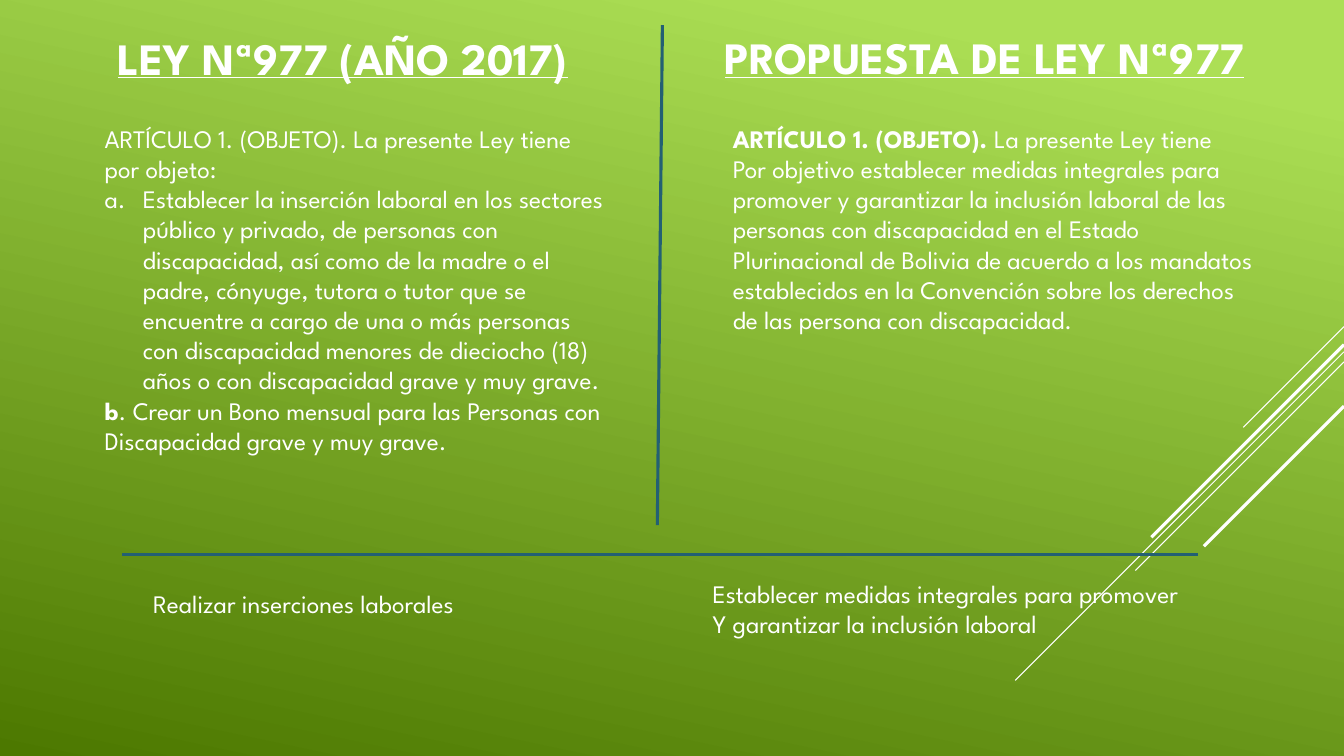
import dataclasses

import lxml.etree
import pptx
import pptx.dml.color
import pptx.enum.shapes
import pptx.enum.text
import pptx.oxml.ns
import pptx.util


@dataclasses.dataclass(frozen=True)
class Theme:
    font: str = "League Spartan"
    text: str = "FFFFFF"
    divider: str = "236073"
    light: str = "ACDF55"
    dark: str = "4C7800"
    heading_size: float = 32
    body_size: float = 18
    thin: float = 0.75
    thick: float = 2.25


THEME = Theme()
WIDTH, HEIGHT = 13.33, 7.5
LEFT_COLUMN, RIGHT_COLUMN = 0.94, 6.97
HEADING_TOP, ARTICLE_TOP, SUMMARY_TOP = 0.25, 1.17, 5.69


def color(value):
    return pptx.dml.color.RGBColor.from_string(value)


def inches(*lengths):
    return [pptx.util.Inches(length) for length in lengths]


def paint_background(slide):
    fill = slide.background.fill
    fill.gradient()
    fill.gradient_angle = 258
    stops = ((0.1, THEME.light), (1, THEME.dark))
    for stop, (position, value) in zip(fill.gradient_stops, stops):
        stop.position = position
        stop.color.rgb = color(value)


def add_line(slide, start, end, value, width):
    line = slide.shapes.add_connector(
        pptx.enum.shapes.MSO_CONNECTOR.STRAIGHT, *inches(*start, *end))
    line.line.color.rgb = color(value)
    line.line.width = pptx.util.Pt(width)
    properties = line._element.spPr
    lxml.etree.SubElement(properties, pptx.oxml.ns.qn("a:effectLst"))


def add_stripes(slide):
    stripes = (
        (3.24, 1, THEME.thin),
        (3.49, 3.26, THEME.thin),
        (3.59, 2.07, THEME.thin),
        (3.42, 1.91, THEME.thick),
        (4.03, 1.39, THEME.thick),
    )
    for top, length, width in stripes:
        add_line(slide, (WIDTH, top), (WIDTH - length, top + length), THEME.text, width)


def add_dividers(slide):
    add_line(slide, (6.57, 0.25), (6.52, 5.21), THEME.divider, THEME.thick)
    add_line(slide, (1.21, 5.5), (11.88, 5.5), THEME.divider, THEME.thick)


def number_with_letter(paragraph):
    properties = paragraph._p.get_or_add_pPr()
    indent = pptx.util.Inches(0.38)
    properties.set("marL", str(indent))
    properties.set("indent", str(-indent))
    lxml.etree.SubElement(
        properties, pptx.oxml.ns.qn("a:buFont"), typeface="+mj-lt")
    lxml.etree.SubElement(
        properties, pptx.oxml.ns.qn("a:buAutoNum"), type="alphaLcPeriod")


def write_text(shape, paragraphs, size, wrap=True, underline=None):
    frame = shape.text_frame
    frame.word_wrap = wrap
    frame.auto_size = pptx.enum.text.MSO_AUTO_SIZE.SHAPE_TO_FIT_TEXT
    frame.vertical_anchor = pptx.enum.text.MSO_ANCHOR.TOP
    for index, runs in enumerate(paragraphs):
        paragraph = frame.add_paragraph() if index else frame.paragraphs[0]
        paragraph.alignment = pptx.enum.text.PP_ALIGN.LEFT
        paragraph.space_before = pptx.util.Pt(0)
        for text, bold in runs:
            run = paragraph.add_run()
            run.text = text
            run.font.name = THEME.font
            run.font.size = pptx.util.Pt(size)
            run.font.bold = bold
            run.font.underline = underline
            run.font.color.rgb = color(THEME.text)
    return frame


def add_headings(slide):
    title = slide.shapes.title
    title.left, title.top, title.width, title.height = inches(
        LEFT_COLUMN + 0.13, HEADING_TOP, 4.92, 0.64)
    proposal = slide.shapes.add_textbox(
        *inches(RIGHT_COLUMN + 0.12, HEADING_TOP, 5.5, 0.64))
    headings = ((title, "LEY Nª977 (AÑO 2017)"), (proposal, "PROPUESTA DE LEY Nª977"))
    for shape, text in headings:
        write_text(shape, [[(text, True)]], THEME.heading_size, False, True)


def add_body(slide, box, paragraphs, wrap=True):
    shape = slide.shapes.add_textbox(*inches(*box))
    return write_text(shape, paragraphs, THEME.body_size, wrap)


def add_current_law(slide, box):
    frame = add_body(slide, box, [
        [("ARTÍCULO 1. (OBJETO). La presente Ley tiene por objeto:", False)],
        [("Establecer la inserción laboral en los sectores público y privado, "
          "de personas con discapacidad, así como de la madre o el padre, "
          "cónyuge, tutora o tutor que se encuentre a cargo de una o más "
          "personas con discapacidad menores de dieciocho (18) años o con "
          "discapacidad grave y muy grave.", False)],
        [("b", True),
         (". Crear un Bono mensual para las Personas con Discapacidad grave "
          "y muy grave.", False)],
    ])
    number_with_letter(frame.paragraphs[1])


def add_proposed_law(slide, box):
    add_body(slide, box, [
        [("ARTÍCULO 1. (OBJETO). ", True), ("La presente Ley tiene", False)],
        [("Por objetivo establecer medidas integrales para promover y "
          "garantizar la inclusión laboral de las personas con discapacidad "
          "en el Estado Plurinacional de Bolivia de acuerdo a los mandatos "
          "establecidos en la Convención sobre los derechos de las persona "
          "con discapacidad.", False)],
    ])


def add_summaries(slide):
    add_body(slide, (LEFT_COLUMN + 0.48, SUMMARY_TOP + 0.1, 3.75, 0.4),
             [[("Realizar inserciones laborales", False)]], False)
    add_body(slide, (RIGHT_COLUMN, SUMMARY_TOP, 5.8, 0.71), [
        [("Establecer medidas integrales para promover", False)],
        [("Y garantizar la inclusión laboral", False)],
    ], False)


def main():
    presentation = pptx.Presentation()
    presentation.slide_width, presentation.slide_height = inches(WIDTH, HEIGHT)
    slide = presentation.slides.add_slide(presentation.slide_layouts[5])
    paint_background(slide)
    add_stripes(slide)
    add_headings(slide)
    add_current_law(slide, (LEFT_COLUMN, ARTICLE_TOP, 5.17, 4.34))
    add_proposed_law(slide, (RIGHT_COLUMN + 0.2, ARTICLE_TOP, 5.41, 2.83))
    add_dividers(slide)
    add_summaries(slide)
    presentation.save("out.pptx")


if __name__ == "__main__":
    main()
